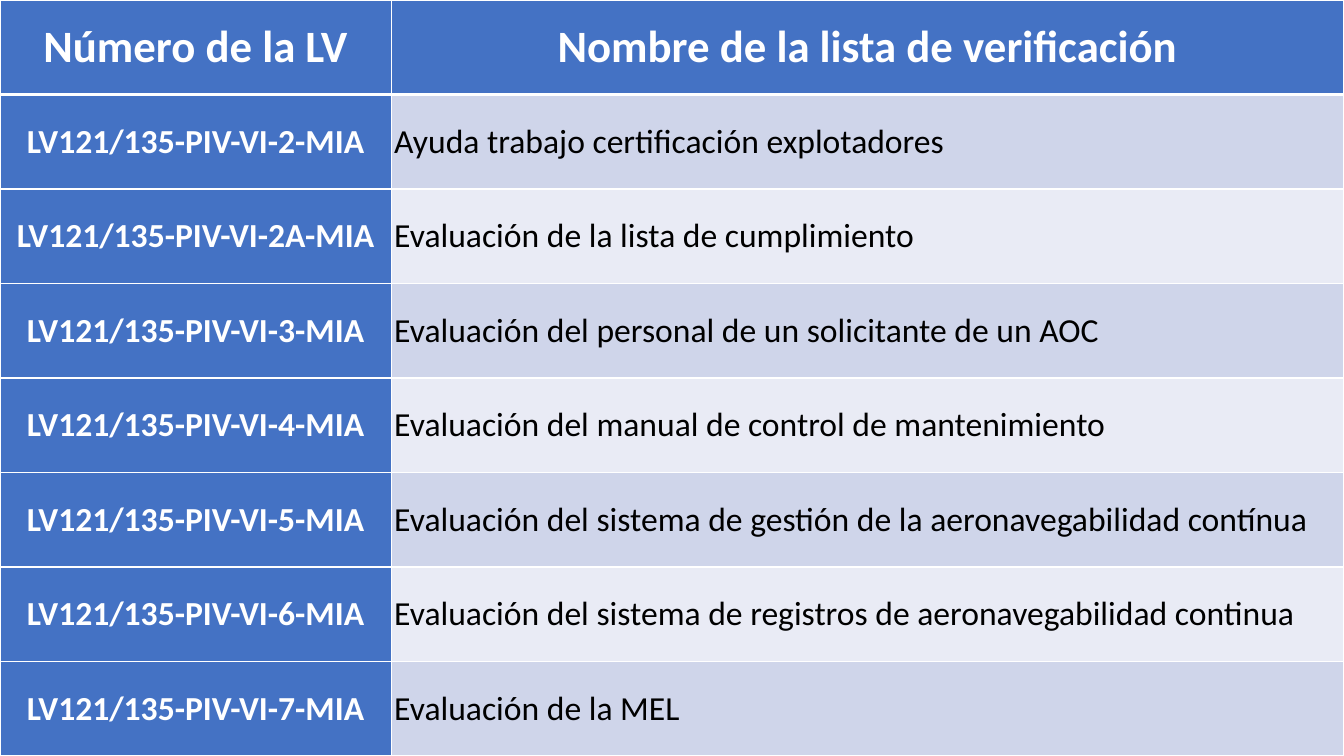
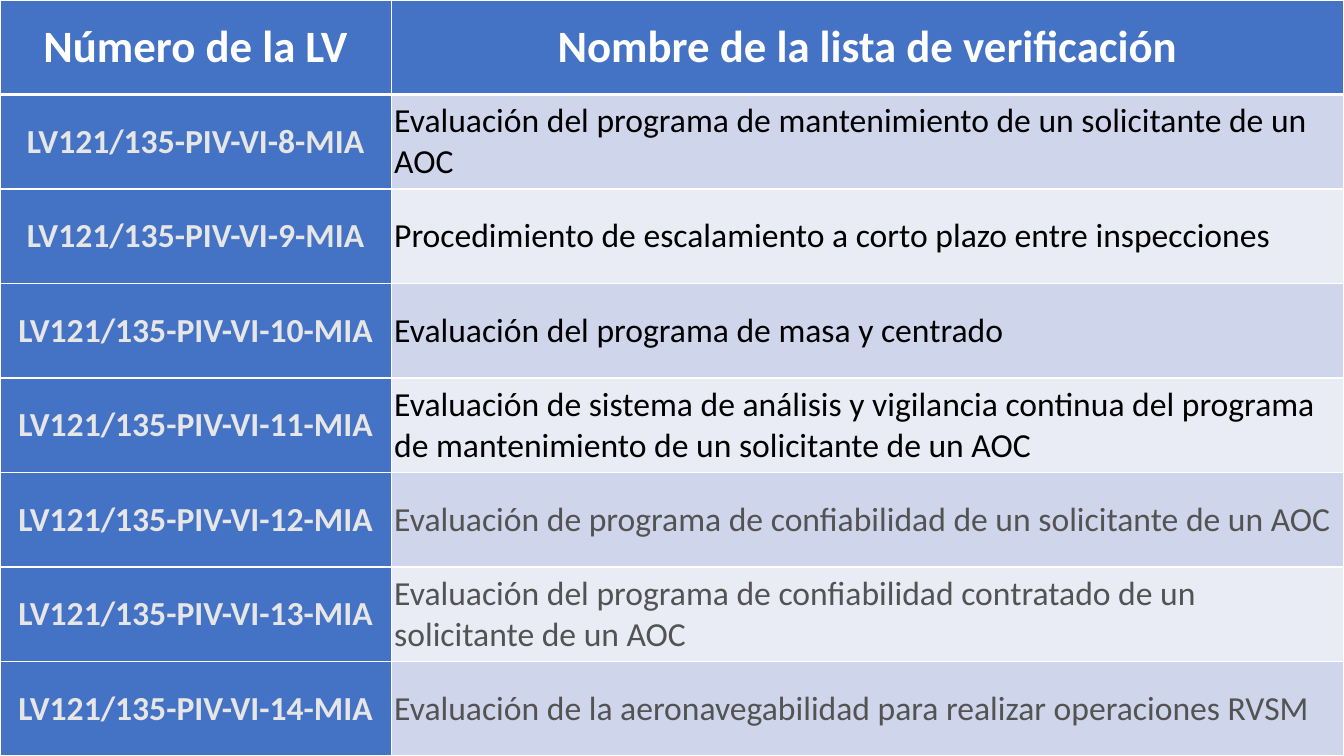
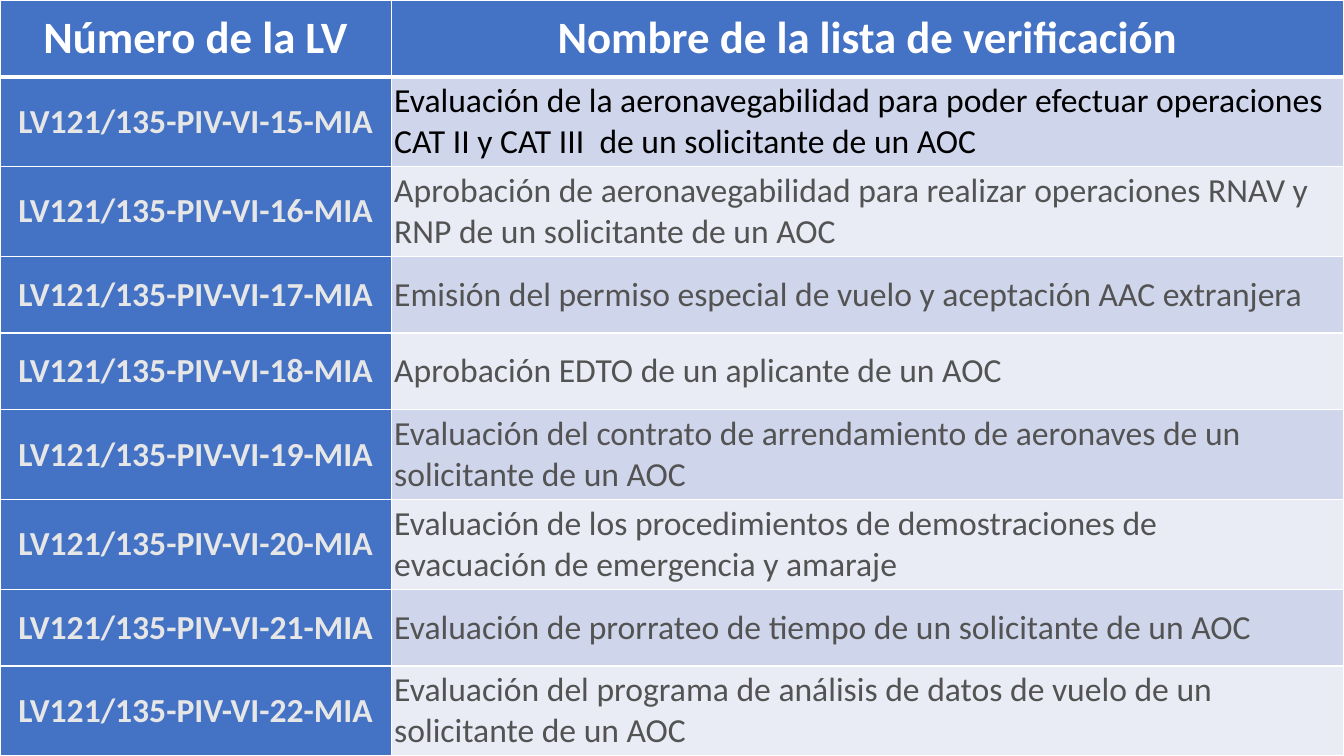
from lxml import etree
from pptx import Presentation
from pptx import util as u
from pptx.dml import color
from pptx.enum import text
from pptx.oxml import ns

HEADINGS = ("Número de la LV", "Nombre de la lista de verificación")
BLACK, GREY, WHITE, PALE = "000000", "535353", "FFFFFF", "E7E6E6"

CERTIFICATION = [
    ("2", "Ayuda trabajo certificación explotadores", BLACK),
    ("2A", "Evaluación de la lista de cumplimiento", BLACK),
    ("3", "Evaluación del personal de un solicitante de un AOC", BLACK),
    ("4", "Evaluación del manual de control de mantenimiento", BLACK),
    ("5", "Evaluación del sistema de gestión de la aeronavegabilidad contínua", BLACK),
    ("6", "Evaluación del sistema de registros de aeronavegabilidad continua", BLACK),
    ("7", "Evaluación de la MEL", BLACK),
]
PROGRAMS = [
    ("8", "Evaluación del programa de mantenimiento de un solicitante de un AOC", BLACK),
    ("9", "Procedimiento de escalamiento a corto plazo entre inspecciones", BLACK),
    ("10", "Evaluación del programa de masa y centrado", BLACK),
    ("11", "Evaluación de sistema de análisis y vigilancia continua del programa "
           "de mantenimiento de un solicitante de un AOC", BLACK),
    ("12", "Evaluación de programa de confiabilidad de un solicitante de un AOC", GREY),
    ("13", "Evaluación del programa de confiabilidad contratado de un "
           "solicitante de un AOC", GREY),
    ("14", "Evaluación de la aeronavegabilidad para realizar operaciones RVSM", GREY),
]
OPERATIONS = [
    ("15", "Evaluación de la aeronavegabilidad para poder efectuar operaciones "
           "CAT II y CAT III  de un solicitante de un AOC", BLACK),
    ("16", "Aprobación de aeronavegabilidad para realizar operaciones RNAV y "
           "RNP de un solicitante de un AOC", GREY),
    ("17", "Emisión del permiso especial de vuelo y aceptación AAC extranjera", GREY),
    ("18", "Aprobación EDTO de un aplicante de un AOC", GREY),
    ("19", "Evaluación del contrato de arrendamiento de aeronaves de un "
           "solicitante de un AOC", GREY),
    ("20", "Evaluación de los procedimientos de demostraciones de\n"
           "evacuación de emergencia y amaraje", GREY),
    ("21", "Evaluación de prorrateo de tiempo de un solicitante de un AOC", GREY),
    ("22", "Evaluación del programa de análisis de datos de vuelo de un "
           "solicitante de un AOC", GREY),
]


def rgb(value):
    """Turn a hex string into a colour."""
    return color.RGBColor.from_string(value)


class Deck:
    """Checklist tables that fill each slide."""

    FONT = "Calibri"
    BLUE = "4472C4"
    BANDS = ("CFD5EA", "E9EBF5")
    WIDTHS = (3.88, 9.45)
    HEIGHT = 7.5
    TALL = 0.89

    def __init__(self):
        self.prs = Presentation()
        self.prs.slide_width = u.Inches(sum(self.WIDTHS))
        self.prs.slide_height = u.Inches(self.HEIGHT)
        self.slide = None

    def add_slide(self):
        """Start a blank slide."""
        self.slide = self.prs.slides.add_slide(self.prs.slide_layouts[6])

    def borders(self, cell, top, bottom):
        """Draw white cell borders, with the given top and bottom widths."""
        tc_pr = cell._tc.get_or_add_tcPr()
        for side, width in (("L", 1), ("R", 1), ("T", top), ("B", bottom)):
            ln = etree.SubElement(tc_pr, ns.qn(f"a:ln{side}"), w=str(u.Pt(width)))
            fill = etree.SubElement(ln, ns.qn("a:solidFill"))
            etree.SubElement(fill, ns.qn("a:srgbClr"), val=WHITE)

    def cell(self, cell, words, fill, ink, size=24, bold=True, centred=True):
        """Fill a cell and set its text."""
        cell.fill.solid()
        cell.fill.fore_color.rgb = rgb(fill)
        cell.vertical_anchor = text.MSO_ANCHOR.MIDDLE
        cell.margin_left = cell.margin_right = u.Inches(0.03)
        cell.margin_top = cell.margin_bottom = u.Inches(0.03)
        cell.text_frame.text = words
        for p in cell.text_frame.paragraphs:
            p.alignment = text.PP_ALIGN.CENTER if centred else text.PP_ALIGN.LEFT
            p.font.name = self.FONT
            p.font.size = u.Pt(size)
            p.font.bold = bold
            p.font.color.rgb = rgb(ink)

    def checklist(self, items, code_ink, tall=()):
        """Add a table of checklists; rows in tall get the fixed larger height."""
        count = len(items) + 1
        short = (self.HEIGHT - self.TALL * len(tall)) / (count - len(tall))
        table = self.slide.shapes.add_table(
            count, 2, 0, 0, self.prs.slide_width, self.prs.slide_height).table
        table.first_col = True
        for column, width in zip(table.columns, self.WIDTHS):
            column.width = u.Inches(width)
        for i, row in enumerate(table.rows):
            row.height = u.Inches(self.TALL if i in tall else short)
            for cell in row.cells:
                self.borders(cell, 3 if i == 1 else 1, 3 if i == 0 else 1)
        for i, heading in enumerate(HEADINGS):
            self.cell(table.cell(0, i), heading, self.BLUE, WHITE, size=32)
        for i, (number, name, ink) in enumerate(items, 1):
            self.cell(table.cell(i, 0), f"LV121/135-PIV-VI-{number}-MIA",
                      self.BLUE, code_ink)
            self.cell(table.cell(i, 1), name, self.BANDS[(i - 1) % 2], ink,
                      bold=False, centred=False)


def main():
    """Build and save the presentation."""
    deck = Deck()
    for items, code_ink, tall in ((CERTIFICATION, WHITE, ()),
                                  (PROGRAMS, PALE, ()),
                                  (OPERATIONS, PALE, (1, 2, 5, 6, 8))):
        deck.add_slide()
        deck.checklist(items, code_ink, tall)
    deck.prs.save("out.pptx")


if __name__ == "__main__":
    main()
